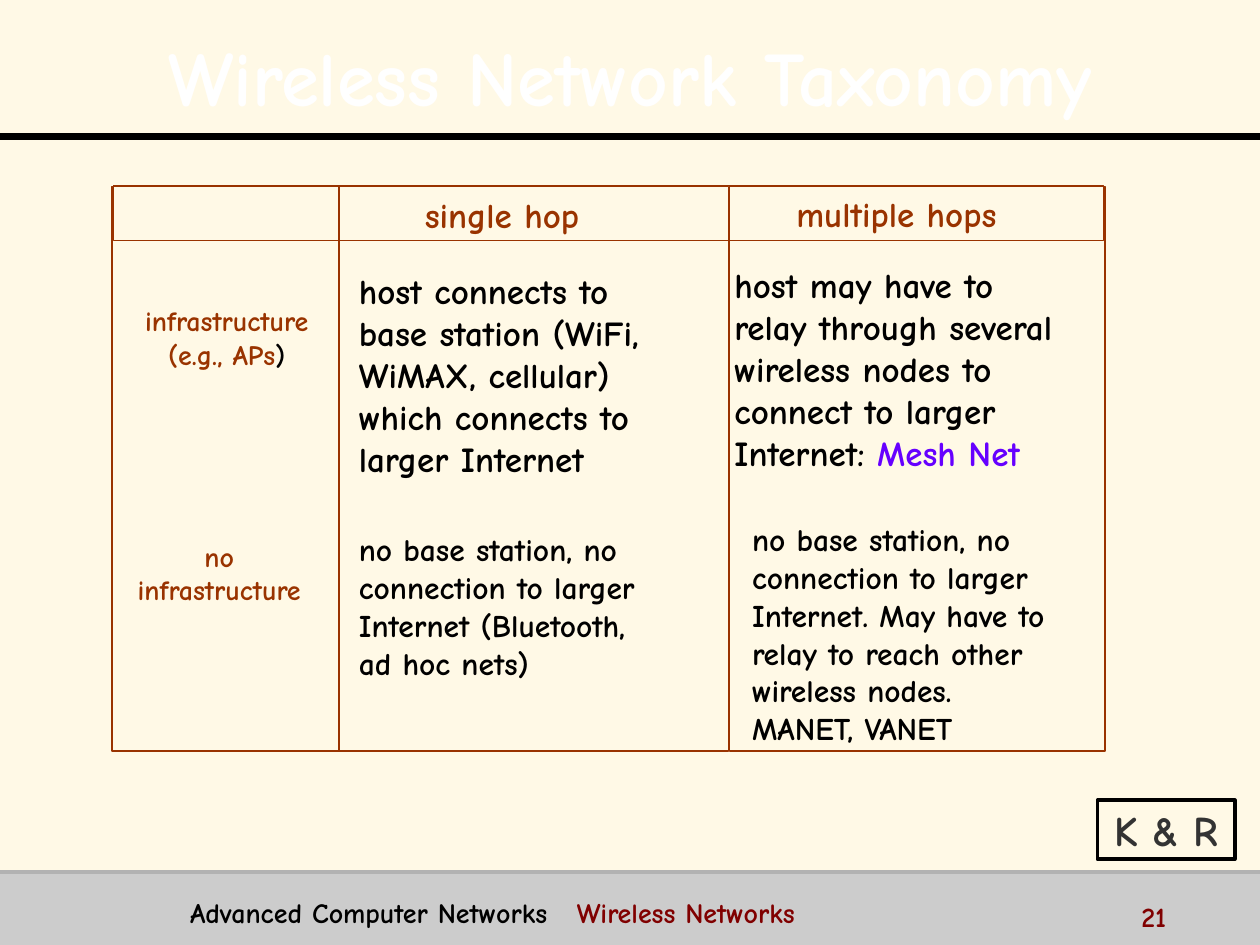
"""Build the wireless network taxonomy slide."""
from dataclasses import dataclass

from lxml import etree
from pptx import Presentation
from pptx.dml.color import RGBColor
from pptx.enum.shapes import MSO_CONNECTOR, MSO_SHAPE
from pptx.enum.text import MSO_ANCHOR, MSO_AUTO_SIZE, PP_ALIGN
from pptx.oxml.ns import qn
from pptx.util import Inches, Pt

LEFT, CENTER = PP_ALIGN.LEFT, PP_ALIGN.CENTER
TOP, MIDDLE = MSO_ANCHOR.TOP, MSO_ANCHOR.MIDDLE
RECT, STRAIGHT = MSO_SHAPE.RECTANGLE, MSO_CONNECTOR.STRAIGHT
FIXED = MSO_AUTO_SIZE.NONE


@dataclass(frozen=True)
class Theme:
    """Colours and type sizes."""
    face: str = "Comic Neue"
    cream: str = "FFF9E6"
    white: str = "FFFFFF"
    black: str = "000000"
    rust: str = "993300"
    maroon: str = "800000"
    violet: str = "6600FF"
    coal: str = "333333"
    band: str = "CCCCCC"
    edge: str = "B2B2B2"
    title: int = 44
    badge: int = 24
    large: int = 20
    normal: int = 18
    small: int = 16


T = Theme()


@dataclass(frozen=True)
class Box:
    """A place on the slide in inches."""
    left: float
    top: float
    width: float
    height: float

    def spots(self) -> tuple:
        """Give the place as lengths."""
        return (Inches(self.left), Inches(self.top),
                Inches(self.width), Inches(self.height))


@dataclass(frozen=True)
class Label:
    """Lines of text, with a tinted tail on the last one."""
    box: Box
    lines: tuple[str, ...]
    size: int
    color: str = T.black
    align: PP_ALIGN = LEFT
    anchor: MSO_ANCHOR = TOP
    tail: str = ""
    tint: str = T.black
    stop: float = 0


HEADS = (
    Label(Box(3.22, 1.49, 1.53, 0.44), ("single hop",), T.large, T.rust, CENTER),
    Label(Box(6.14, 1.48, 1.95, 0.44), ("multiple hops",), T.large, T.rust, CENTER),
    Label(Box(0.93, 2.36, 1.74, 0.64), ("infrastructure", "(e.g., APs"),
          T.small, T.rust, CENTER, tail=")"),
    Label(Box(0.87, 4.23, 1.74, 0.64), ("no", "infrastructure"),
          T.small, T.rust, CENTER),
)
CELLS = (
    Label(Box(2.75, 2.09, 2.83, 1.78),
          ("host connects to", "base station (WiFi,", "WiMAX, cellular)",
           "which connects to", "larger Internet"), T.large),
    Label(Box(2.75, 4.16, 2.82, 1.31),
          ("no base station, no", "connection to larger",
           "Internet (Bluetooth,", "ad hoc nets)"), T.normal),
    Label(Box(5.73, 2.04, 3.11, 1.78),
          ("host may have to", "relay through several", "wireless nodes to",
           "connect to larger", "Internet: "), T.large,
          tail="Mesh Net", tint=T.violet),
    Label(Box(5.87, 4.08, 2.99, 1.92),
          ("no base station, no", "connection to larger",
           "Internet. May have to", "relay to reach other",
           "wireless nodes.", "MANET, VANET"), T.normal),
)
FOOT = (
    Label(Box(1.41, 7.06, 7.28, 0.31), ("Advanced Computer Networks\t",),
          T.small, tail="Wireless Networks", tint=T.maroon, stop=3.07),
    Label(Box(8.96, 7.09, 1, 0.25), ("21",), T.small, T.maroon),
)
TITLE = Label(Box(0.2, 0.13, 9.61, 0.87), ("Wireless Network Taxonomy",),
              T.title, T.white, CENTER, MIDDLE)
BADGE = Label(Box(8.71, 6.35, 1.09, 0.47), ("K & R",),
              T.badge, T.coal, CENTER, MIDDLE)
FRAMES = (Box(0.9, 1.47, 7.86, 0.44), Box(0.89, 1.48, 1.8, 4.48),
          Box(2.69, 1.48, 3.09, 4.48), Box(5.79, 1.48, 2.98, 4.48))


def tint(color: str) -> RGBColor:
    """Turn a hex code into a colour."""
    return RGBColor.from_string(color)


def write(shape, label: Label) -> None:
    """Fill a shape with the text of a label."""
    shape.left, shape.top, shape.width, shape.height = label.box.spots()
    frame = shape.text_frame
    frame.word_wrap = True
    frame.auto_size = FIXED
    frame.vertical_anchor = label.anchor
    for rank, line in enumerate(label.lines):
        para = frame.add_paragraph() if rank else frame.paragraphs[0]
        para.alignment = label.align
        if label.stop:
            tabs = etree.SubElement(para._p.get_or_add_pPr(), qn("a:tabLst"))
            etree.SubElement(tabs, qn("a:tab"), algn="l",
                             pos=str(Inches(label.stop)))
        font = para.font
        font.name, font.size, font.bold = T.face, Pt(label.size), True
        font.color.rgb = tint(label.color)
        para.add_run().text = line
    if label.tail:
        run = para.add_run()
        run.text = label.tail
        run.font.color.rgb = tint(label.tint)


def place(slide, label: Label):
    """Add a label as a text box."""
    shape = slide.shapes.add_textbox(*label.box.spots())
    write(shape, label)
    return shape


def block(slide, box: Box, fill: str = "", line: str = "") -> None:
    """Add a plain box with a fill or a thin outline."""
    shape = slide.shapes.add_shape(RECT, *box.spots())
    shape.shadow.inherit = False
    for part, color in ((shape.fill, fill), (shape.line.fill, line)):
        if color:
            part.solid()
            part.fore_color.rgb = tint(color)
        else:
            part.background()
    if line:
        shape.line.width = Pt(0.75)


def rule(slide, top: float, color: str, width: float) -> None:
    """Draw a line across the whole slide."""
    line = slide.shapes.add_connector(STRAIGHT, 0, Inches(top),
                                      Inches(10), Inches(top))
    line.line.color.rgb = tint(color)
    line.line.width = Pt(width)
    etree.SubElement(line._element.spPr, qn("a:effectLst"))


def shade(run) -> None:
    """Give a run of text a hard black shadow."""
    glow = etree.SubElement(run._r.get_or_add_rPr(), qn("a:effectLst"))
    cast = etree.SubElement(glow, qn("a:outerShdw"), dist="35921", dir="2700000")
    etree.SubElement(cast, qn("a:srgbClr"), val=T.black)


def main() -> None:
    """Draw the slide and save it."""
    deck = Presentation()
    deck.slide_width, deck.slide_height = Inches(10), Inches(7.5)
    slide = deck.slides.add_slide(deck.slide_layouts[5])
    back = slide.background.fill
    back.solid()
    back.fore_color.rgb = tint(T.cream)

    block(slide, Box(0, 6.92, 10, 0.58), fill=T.band)
    rule(slide, 1.08, T.black, 4)
    rule(slide, 6.92, T.edge, 2)

    write(slide.shapes.title, TITLE)
    head = slide.shapes.title.text_frame.paragraphs[0]
    head.line_spacing = 1.1
    shade(head.runs[0])

    for box in FRAMES:
        block(slide, box, line=T.rust)
    for label in HEADS + CELLS + FOOT:
        place(slide, label)
    badge = place(slide, BADGE)
    badge.line.color.rgb = tint(T.black)
    badge.line.width = Pt(2)
    deck.save("out.pptx")


if __name__ == "__main__":
    main()
